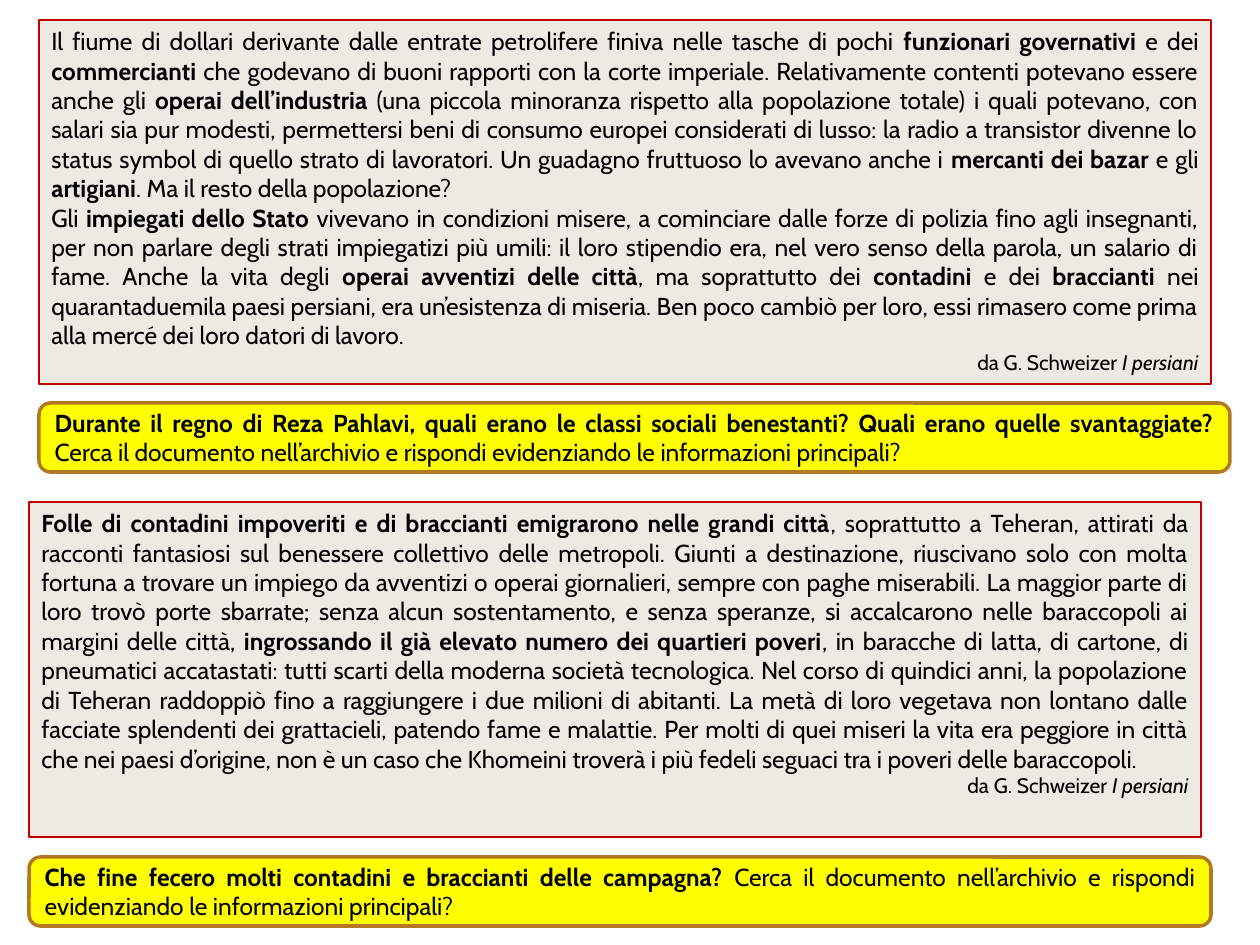
import pptx
import pptx.util
import pptx.dml.color
import pptx.enum.shapes
import pptx.enum.text

RGBColor = pptx.dml.color.RGBColor
SHAPE = pptx.enum.shapes.MSO_SHAPE
ALIGN = pptx.enum.text.PP_ALIGN
ANCHOR = pptx.enum.text.MSO_ANCHOR

EMU_PER_PX = 914400 // 126
FONT = "Cabin"
BLACK = RGBColor(0x00, 0x00, 0x00)
PAPER = RGBColor(0xEC, 0xEA, 0xE3)
RED = RGBColor(0xC0, 0x00, 0x00)
YELLOW = RGBColor(0xFF, 0xFF, 0x00)
OCHRE = RGBColor(0xB2, 0x78, 0x22)

PLAIN, BOLD, ITALIC = "plain", "bold", "italic"

INCOME = [
    [
        ("Il fiume di dollari derivante dalle entrate petrolifere finiva nelle tasche di pochi ", PLAIN),
        ("funzionari governativi ", BOLD),
        ("e dei ", PLAIN),
        ("commercianti", BOLD),
        (" che godevano di buoni rapporti con la corte imperiale. Relativamente contenti "
         "potevano essere anche gli ", PLAIN),
        ("operai dell’industria ", BOLD),
        ("(una piccola minoranza rispetto alla popolazione totale) i quali potevano, con salari "
         "sia pur modesti, permettersi beni di consumo europei considerati di lusso: la radio a "
         "transistor divenne lo status symbol di quello strato di lavoratori. Un guadagno "
         "fruttuoso lo avevano anche i ", PLAIN),
        ("mercanti dei bazar ", BOLD),
        ("e gli ", PLAIN),
        ("artigiani", BOLD),
        (". Ma il resto della popolazione?", PLAIN),
    ],
    [
        ("Gli ", PLAIN),
        ("impiegati dello Stato ", BOLD),
        ("vivevano in condizioni misere, a cominciare dalle forze di polizia fino agli insegnanti, "
         "per non parlare degli strati impiegatizi più umili: il loro stipendio era, nel vero senso "
         "della parola, un salario di fame. Anche la vita degli ", PLAIN),
        ("operai avventizi delle città", BOLD),
        (", ma soprattutto dei ", PLAIN),
        ("contadini", BOLD),
        (" e dei ", PLAIN),
        ("braccianti ", BOLD),
        ("nei quarantaduemila paesi persiani, era un’esistenza di miseria. Ben poco cambiò per "
         "loro, essi rimasero come prima alla mercé dei loro datori di lavoro.", PLAIN),
    ],
]

MIGRATION = [
    [
        ("Folle di contadini impoveriti e di braccianti emigrarono nelle grandi città", BOLD),
        (", soprattutto a Teheran, attirati da racconti fantasiosi sul benessere collettivo delle "
         "metropoli. Giunti a destinazione, riuscivano solo con molta fortuna a trovare un impiego "
         "da avventizi o operai giornalieri, sempre con paghe miserabili. La maggior parte di loro "
         "trovò porte sbarrate; senza alcun sostentamento, e senza speranze, si accalcarono nelle "
         "baraccopoli ai margini delle città, ", PLAIN),
        ("ingrossando il già elevato numero dei quartieri poveri", BOLD),
        (", in baracche di latta, di cartone, di pneumatici accatastati: tutti scarti della moderna "
         "società tecnologica. Nel corso di quindici anni, la popolazione di Teheran raddoppiò fino "
         "a raggiungere i due milioni di abitanti. La metà di loro vegetava non lontano dalle "
         "facciate splendenti dei grattacieli, patendo fame e malattie. Per molti di quei miseri la "
         "vita era peggiore in città che nei paesi d’origine, non è un caso che Khomeini troverà i "
         "più fedeli seguaci tra i poveri delle baraccopoli.", PLAIN),
    ],
]

CREDIT = [("da G. Schweizer ", PLAIN), ("I persiani", ITALIC)]
TASK = "Cerca il documento nell’archivio e rispondi evidenziando le informazioni principali?"


def px(n):
    return pptx.util.Emu(n * EMU_PER_PX)


def add_box(s, shape, box, fill, line, width, anchor):
    sp = s.shapes.add_shape(shape, *map(px, box))
    sp.shadow.inherit = False
    sp.fill.solid()
    sp.fill.fore_color.rgb = fill
    sp.line.color.rgb = line
    sp.line.width = pptx.util.Pt(width)
    tf = sp.text_frame
    tf.word_wrap = True
    tf.vertical_anchor = anchor
    return tf


def write_paragraph(p, runs, size=14, align=ALIGN.JUSTIFY):
    p.alignment = align
    for text, style in runs:
        r = p.add_run()
        r.text = text
        r.font.name = FONT
        r.font.size = pptx.util.Pt(size)
        r.font.color.rgb = BLACK
        r.font.bold = style == BOLD
        r.font.italic = style == ITALIC


def add_passage(s, box, paragraphs):
    tf = add_box(s, SHAPE.RECTANGLE, box, PAPER, RED, 1.5, ANCHOR.TOP)
    write_paragraph(tf.paragraphs[0], paragraphs[0])
    for runs in paragraphs[1:]:
        write_paragraph(tf.add_paragraph(), runs)
    write_paragraph(tf.add_paragraph(), CREDIT, 12, ALIGN.RIGHT)


def add_question(s, box, question):
    tf = add_box(s, SHAPE.ROUNDED_RECTANGLE, box, YELLOW, OCHRE, 2, ANCHOR.MIDDLE)
    write_paragraph(tf.paragraphs[0], [(question + " ", BOLD), (TASK, PLAIN)])


def main():
    prs = pptx.Presentation()
    prs.slide_width, prs.slide_height = px(1260), px(945)
    s = prs.slides.add_slide(prs.slide_layouts[6])
    add_passage(s, (39, 20, 1172, 364), INCOME)
    add_question(s, (39, 403, 1191, 69),
                 "Durante il regno di Reza Pahlavi, quali erano le classi sociali benestanti? "
                 "Quali erano quelle svantaggiate?")
    add_passage(s, (29, 502, 1172, 335), MIGRATION)
    add_question(s, (29, 857, 1182, 69),
                 "Che fine fecero molti contadini e braccianti delle campagna?")
    prs.save("out.pptx")


if __name__ == "__main__":
    main()
